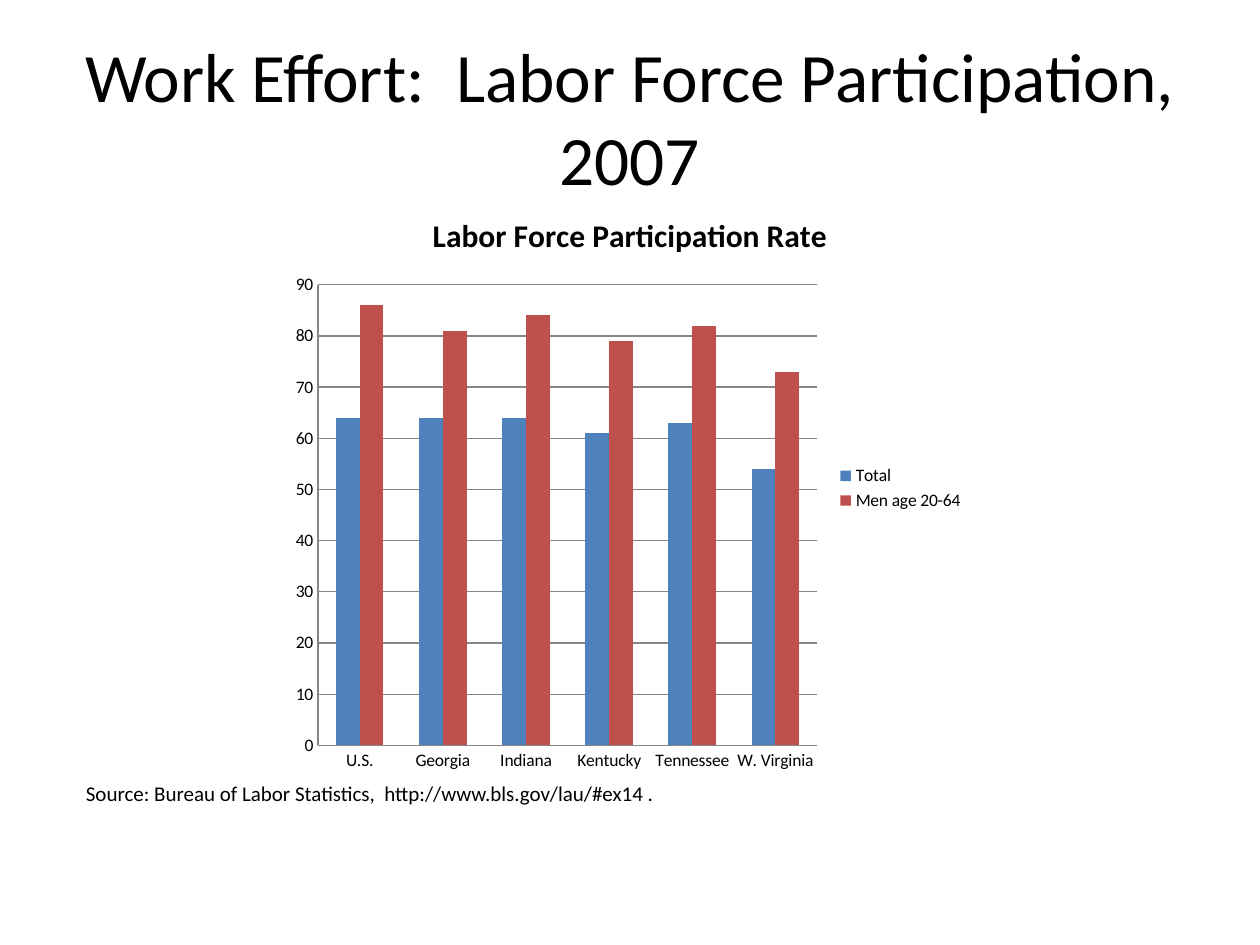
from pptx import Presentation
from pptx.chart.data import CategoryChartData
from pptx.dml.color import RGBColor
from pptx.enum.chart import XL_CHART_TYPE as ChartType, XL_LEGEND_POSITION as LegendPos
from pptx.enum.chart import XL_TICK_MARK as TickMark
from pptx.enum.text import MSO_ANCHOR as Anchor, PP_ALIGN as Align
from pptx.oxml import parse_xml
from pptx.oxml.ns import nsdecls
from pptx.util import Pt

COLORS = {"text": "000000", "grid": "868686", "Total": "4F81BD", "Men age 20-64": "C0504D"}
RATES = {
    "Total": (64, 64, 64, 61, 63, 54),
    "Men age 20-64": (86, 81, 84, 79, 82, 73),
}
REGIONS = ("U.S.", "Georgia", "Indiana", "Kentucky", "Tennessee", "W. Virginia")


def style_font(font, size, bold=False):
    for name, value in {"name": "Calibri", "size": Pt(size), "bold": bold}.items():
        setattr(font, name, value)
    font.color.rgb = RGBColor.from_string(COLORS["text"])


deck = Presentation()
deck.slide_width, deck.slide_height = Pt(720), Pt(540)
slide = deck.slides.add_slide(deck.slide_layouts[6])

# Heading and source line
for wording, box, size, align, anchor in (
    ("Work Effort:  Labor Force Participation, 2007",
     (36, 21.6, 648, 90), 39.6, Align.CENTER, Anchor.MIDDLE),
    ("Source: Bureau of Labor Statistics,  http://www.bls.gov/lau/#ex14 .",
     (42, 442.5, 648, 24), 12, Align.LEFT, Anchor.TOP),
):
    frame = slide.shapes.add_textbox(*map(Pt, box)).text_frame
    frame.word_wrap = True
    frame.vertical_anchor = anchor
    line = frame.paragraphs[0]
    line.alignment = align
    run = line.add_run()
    run.text = wording
    style_font(run.font, size)

# Participation chart
rates = CategoryChartData(number_format="0")
rates.categories = REGIONS
for group, values in RATES.items():
    rates.add_series(group, values)
chart = slide.shapes.add_chart(
    ChartType.COLUMN_CLUSTERED, Pt(162), Pt(108), Pt(396), Pt(342), rates).chart
style_font(chart.font, 10)

chart.has_title = True
chart_title = chart.chart_title.text_frame
chart_title.text = "Labor Force Participation Rate"
style_font(chart_title.paragraphs[0].runs[0].font, 18, bold=True)
chart.chart_title.include_in_layout = False

chart.has_legend = True
chart.legend.position = LegendPos.RIGHT
chart.legend.include_in_layout = False

# Columns
columns = chart.plots[0]
columns.gap_width = 150
columns.overlap = 0
columns.vary_by_categories = False
for series in columns.series:
    series.format.fill.solid()
    series.format.fill.fore_color.rgb = RGBColor.from_string(COLORS[series.name])

# Axes and gridlines
scale = chart.value_axis
for name, value in {"minimum_scale": 0, "maximum_scale": 90, "major_unit": 10,
                    "has_major_gridlines": True}.items():
    setattr(scale, name, value)
scale.tick_labels.number_format = "0"
scale.tick_labels.number_format_is_linked = False
for axis in (scale, chart.category_axis):
    axis.major_tick_mark = axis.minor_tick_mark = TickMark.NONE
for ruled in (scale, chart.category_axis, scale.major_gridlines):
    ruled.format.line.width = Pt(0.75)
    ruled.format.line.color.rgb = RGBColor.from_string(COLORS["grid"])

# Fixed plot area, as fractions of the chart
plot_area = chart.element.chart.plotArea
for layout in plot_area.findall("{*}layout"):
    plot_area.remove(layout)
fractions = "".join(f'<c:{side} val="{part}"/>' for side, part in
                    {"x": 0.05, "y": 0.16, "w": 0.72, "h": 0.77}.items())
plot_area.insert(0, parse_xml(
    f'<c:layout {nsdecls("c")}><c:manualLayout><c:layoutTarget val="inner"/>'
    f'<c:xMode val="edge"/><c:yMode val="edge"/>{fractions}</c:manualLayout></c:layout>'))

deck.save("out.pptx")
